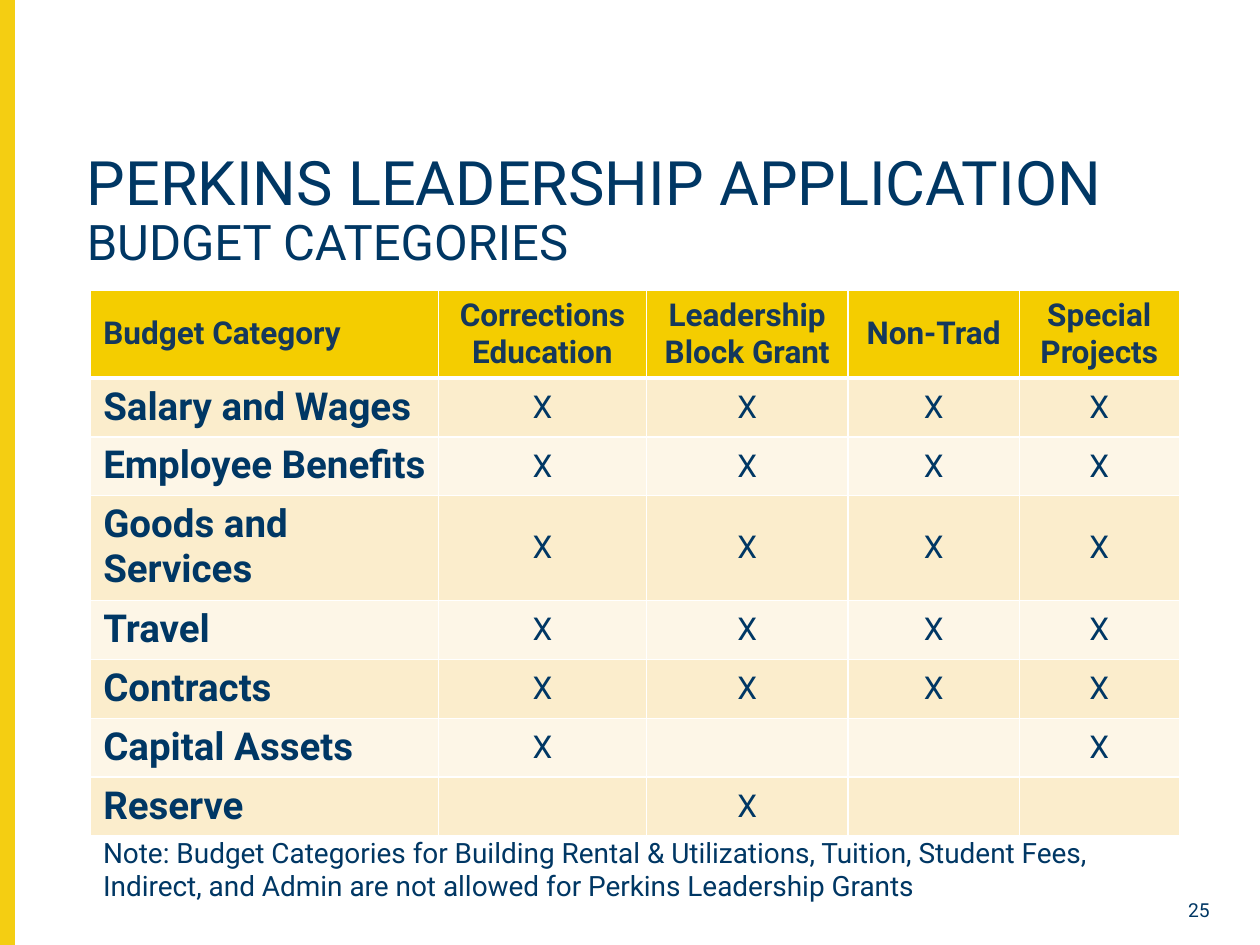
from lxml import etree
from pptx import Presentation
from pptx.dml.color import RGBColor
from pptx.enum.shapes import MSO_SHAPE
from pptx.enum.text import MSO_ANCHOR, PP_ALIGN
from pptx.oxml.ns import qn
from pptx.util import Inches, Pt

RECT = MSO_SHAPE.RECTANGLE
TOP, MIDDLE = MSO_ANCHOR.TOP, MSO_ANCHOR.MIDDLE
LEFT, CENTER, RIGHT = PP_ALIGN.LEFT, PP_ALIGN.CENTER, PP_ALIGN.RIGHT
NAVY = RGBColor(0x00, 0x37, 0x64)
SLATE = RGBColor(0x15, 0x38, 0x5C)
GOLD = RGBColor(0xF4, 0xCD, 0x00)
YELLOW = RGBColor(0xF4, 0xCE, 0x12)
CREAM = RGBColor(0xFB, 0xED, 0xCC)
IVORY = RGBColor(0xFD, 0xF6, 0xE7)
WHITE = RGBColor(0xFF, 0xFF, 0xFF)

HEADS = ["Budget Category", "Corrections Education", "Leadership Block Grant",
         "Non-Trad", "Special Projects"]
MARKS = {
    "Salary and Wages": [1, 2, 3, 4],
    "Employee Benefits": [1, 2, 3, 4],
    "Goods and Services": [1, 2, 3, 4],
    "Travel": [1, 2, 3, 4],
    "Contracts": [1, 2, 3, 4],
    "Capital Assets": [1, 4],
    "Reserve": [2],
}
WIDTHS = [2.76, 1.65, 1.6, 1.36, 1.27]
HEIGHT = 0.41


def write(para, text, size, color=NAVY, bold=False):
    run = para.add_run()
    run.text = text
    style = {"name": "Roboto", "size": Pt(size), "bold": bold}
    for key, value in style.items():
        setattr(run.font, key, value)
    run.font.color.rgb = color


def edge(cell, side, width):
    line = etree.SubElement(cell._tc.get_or_add_tcPr(), qn(f"a:ln{side}"), w=str(Pt(width)))
    fill = etree.SubElement(line, qn("a:solidFill"))
    etree.SubElement(fill, qn("a:srgbClr"), val=str(WHITE))


deck = Presentation()
deck.slide_width, deck.slide_height = Inches(10), Inches(7.5)
slide = deck.slides.add_slide(deck.slide_layouts[6])

bar = slide.shapes.add_shape(RECT, 0, 0, Inches(0.11), Inches(7.5))
bar.shadow.inherit = False
bar.fill.solid()
bar.fill.fore_color.rgb = YELLOW
bar.line.color.rgb = YELLOW
bar.line.width = Pt(1)

boxes = [
    ((0.59, 1.16, 9.12, 0.87), TOP, LEFT, 0.9,
     [("PERKINS LEADERSHIP APPLICATION", 35), ("BUDGET CATEGORIES", 28)]),
    ((9.19, 7.09, 0.51, 0.26), MIDDLE, RIGHT, 1.0, [("25", 11)]),
    ((0.72, 6.58, 8.64, 0.64), TOP, LEFT, 1.0,
     [("Note: Budget Categories for Building Rental & Utilizations, Tuition, Student Fees, "
       "Indirect, and Admin are not allowed for Perkins Leadership Grants", 16)]),
]
for place, anchor, align, space, lines in boxes:
    frame = slide.shapes.add_textbox(*map(Inches, place)).text_frame
    frame.word_wrap = True
    frame.vertical_anchor = anchor
    para = frame.paragraphs[0]
    para.alignment = align
    para.line_spacing = space
    for i, (text, size) in enumerate(lines):
        if i:
            para.add_line_break()
        write(para, text, size)

rows = [HEADS]
for name, marks in MARKS.items():
    rows.append([name] + ["X" if c in marks else "" for c in range(1, 5)])

grid = slide.shapes.add_table(len(rows), len(WIDTHS), Inches(0.72), Inches(2.3),
                              Inches(sum(WIDTHS)), Inches(HEIGHT * len(rows))).table
for col, width in zip(grid.columns, WIDTHS):
    col.width = Inches(width)
for r, texts in enumerate(rows):
    grid.rows[r].height = Inches(HEIGHT)
    for c, text in enumerate(texts):
        cell = grid.cell(r, c)
        thick = {"L": 1, "R": 1, "T": 3 if r == 1 else 1, "B": 3 if r == 0 else 1}
        for side, width in thick.items():
            edge(cell, side, width)
        cell.fill.solid()
        cell.fill.fore_color.rgb = GOLD if r == 0 else CREAM if r % 2 else IVORY
        cell.vertical_anchor = MIDDLE if r == 0 or c else TOP
        para = cell.text_frame.paragraphs[0]
        para.alignment = CENTER if c else LEFT
        if text:
            write(para, text, 18 if r == 0 or c else 22,
                  NAVY if r else SLATE, r == 0 or c == 0)

deck.save("out.pptx")
